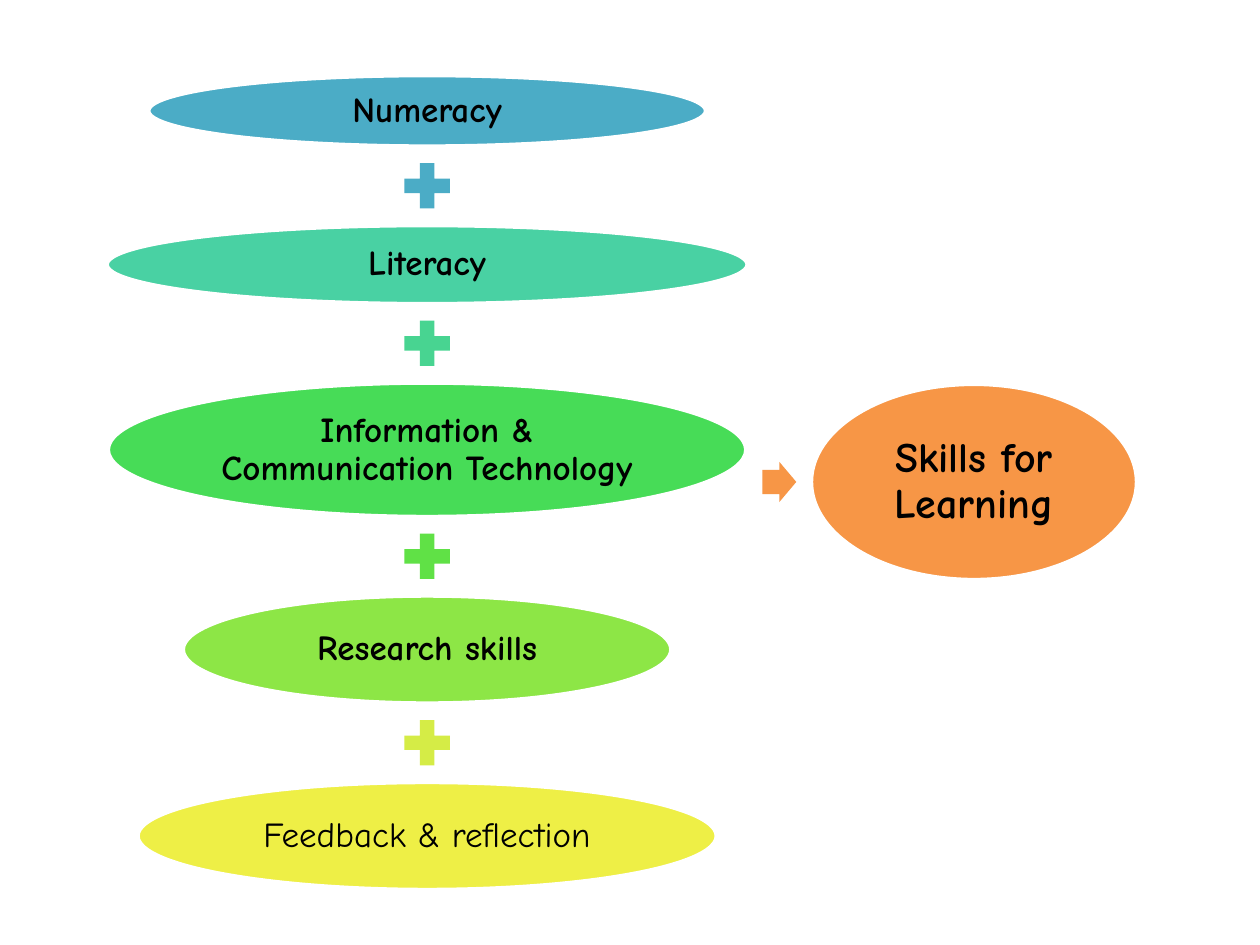
import pptx
import pptx.util
from pptx.dml.color import RGBColor
from pptx.enum.shapes import MSO_SHAPE
from pptx.enum.text import MSO_ANCHOR, PP_ALIGN

PX = 9144  # 100 px to the inch
FONT = "Comic Neue"
WHITE = RGBColor(0xFF, 0xFF, 0xFF)
BLACK = RGBColor(0x00, 0x00, 0x00)
BLUE = RGBColor(0x4B, 0xAC, 0xC6)
TEAL = RGBColor(0x49, 0xD1, 0xA3)
SEA_GREEN = RGBColor(0x48, 0xD4, 0x91)
GREEN = RGBColor(0x47, 0xDC, 0x57)
LEAF = RGBColor(0x60, 0xE1, 0x46)
LIME = RGBColor(0x8D, 0xE6, 0x46)
CITRON = RGBColor(0xD5, 0xEC, 0x46)
YELLOW = RGBColor(0xEE, 0xEF, 0x46)
ORANGE = RGBColor(0xF7, 0x96, 0x46)

PLUS_SIZE = 49
GAP = 7

# text, width, height, colour, bold, colour of the plus below
SKILLS = [
    ("Numeracy", 442, 56, BLUE, True, BLUE),
    ("Literacy", 508, 62, TEAL, True, SEA_GREEN),
    ("Information & Communication Technology", 506, 106, GREEN, True, LEAF),
    ("Research skills", 387, 85, LIME, True, CITRON),
    ("Feedback & reflection", 459, 85, YELLOW, False, None),
]


def add_filled(slide, kind, box, colour):
    shape = slide.shapes.add_shape(kind, *(round(length * PX) for length in box))
    shape.shadow.inherit = False
    shape.fill.solid()
    shape.fill.fore_color.rgb = colour
    shape.line.fill.background()
    return shape


def add_oval(slide, box, colour, text, size, bold):
    oval = add_filled(slide, MSO_SHAPE.OVAL, box, colour)
    oval.line.color.rgb = WHITE
    oval.line.width = pptx.util.Pt(2)
    frame = oval.text_frame
    frame.text = text
    frame.word_wrap = True
    frame.vertical_anchor = MSO_ANCHOR.MIDDLE
    frame.margin_left = frame.margin_right = 3 * PX
    frame.margin_top = frame.margin_bottom = 3 * PX
    para = frame.paragraphs[0]
    para.alignment = PP_ALIGN.CENTER
    para.line_spacing = 0.9
    font = para.runs[0].font
    font.name = FONT
    font.size = pptx.util.Pt(size)
    font.bold = bold
    font.color.rgb = BLACK


def add_skill_column(slide, left, top, width):
    """Stack the skills with a plus between each two, centred in the width."""
    centre = left + width / 2
    for text, oval_width, height, colour, bold, plus_colour in SKILLS:
        box = (centre - oval_width / 2, top, oval_width, height)
        add_oval(slide, box, colour, text, 20, bold)
        top += height + GAP
        if plus_colour is not None:
            plus_box = (centre - PLUS_SIZE / 2, top, PLUS_SIZE, PLUS_SIZE)
            add_filled(slide, MSO_SHAPE.MATH_PLUS, plus_box, plus_colour)
            top += PLUS_SIZE + GAP


def add_result(slide, left, top, width, height):
    """Place an arrow at the left edge and the resulting oval at the right."""
    arrow_width, arrow_height, oval_width = 27, 32, 258
    arrow_top = top + (height - arrow_height) / 2
    arrow = add_filled(slide, MSO_SHAPE.RIGHT_ARROW,
                       (left, arrow_top, arrow_width, arrow_height), ORANGE)
    arrow.adjustments[0] = 0.6
    arrow.adjustments[1] = 0.5
    oval_box = (left + width - oval_width, top, oval_width, height)
    add_oval(slide, oval_box, ORANGE, "Skills for Learning", 24, True)


def main():
    deck = pptx.Presentation()
    deck.slide_width = 1000 * PX
    deck.slide_height = 750 * PX
    slide = deck.slides.add_slide(deck.slide_layouts[6])
    add_skill_column(slide, 85, 60, 508)
    add_result(slide, 605, 305, 297, 155)
    deck.save("out.pptx")


if __name__ == "__main__":
    main()
